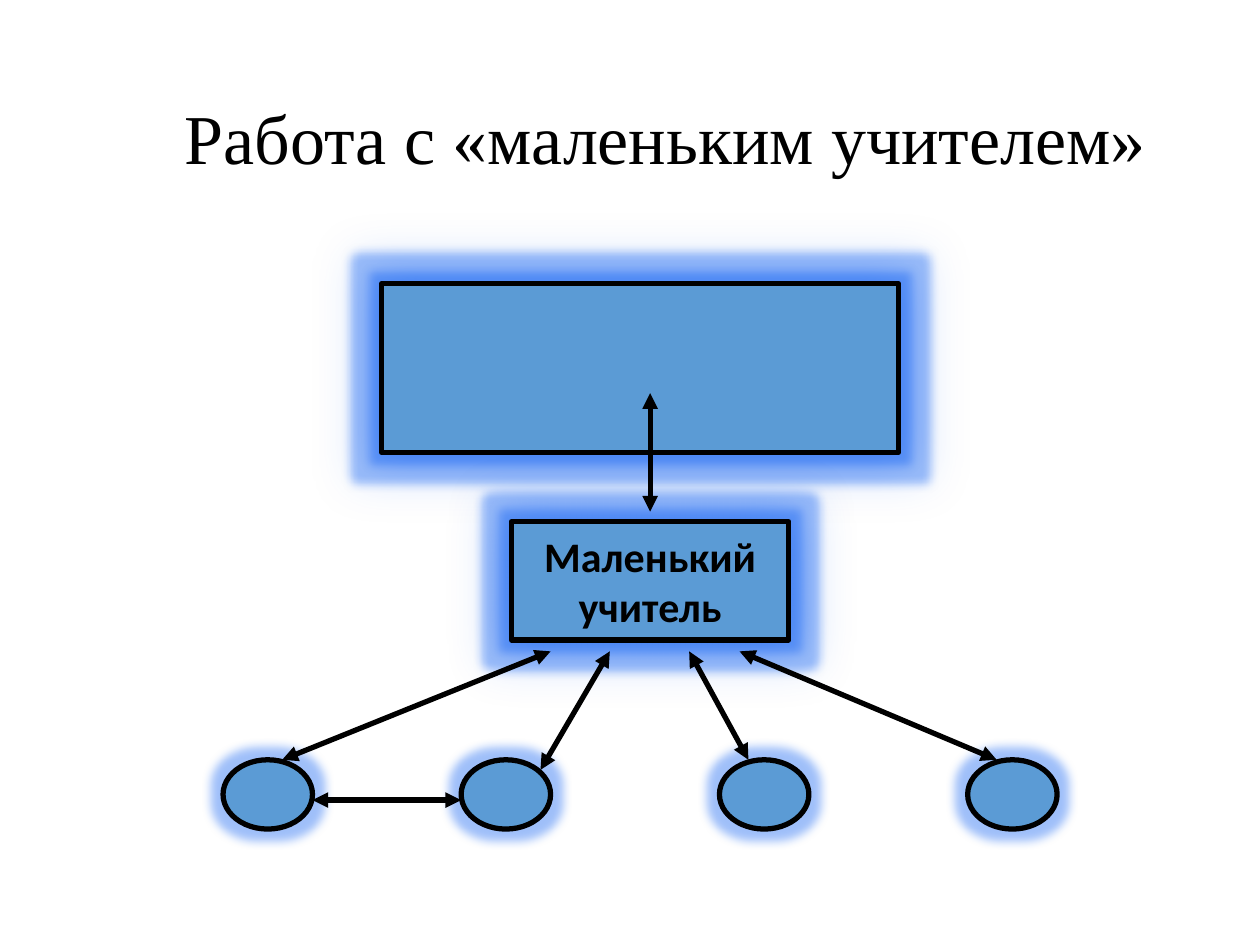
from lxml import etree
from pptx import Presentation
from pptx.dml.color import RGBColor
from pptx.enum import shapes, text
from pptx.oxml import parse_xml
from pptx.oxml.ns import nsdecls, qn
from pptx.util import Inches, Pt

BLACK, BLUE, GLOW = "000000", "5B9BD5", "1161F2"


def rgb(value):
    return RGBColor.from_string(value)


def add_node(kind, x, y, w, h, shadow=""):
    """Blue outlined shape with a glow and an optional soft halo."""
    sp = s.shapes.add_shape(kind, Inches(x), Inches(y), Inches(w), Inches(h))
    sp.shadow.inherit = False
    sp.fill.solid()
    sp.fill.fore_color.rgb = rgb(BLUE)
    sp.line.color.rgb = rgb(BLACK)
    sp.line.width = Pt(3)
    color = f'<a:srgbClr val="{GLOW}"><a:alpha val="40000"/></a:srgbClr>'
    effects = sp._element.spPr.find(qn("a:effectLst"))
    effects.append(parse_xml(f'<a:glow {nsdecls("a")} rad="139700">{color}</a:glow>'))
    if shadow:
        effects.append(parse_xml(
            f'<a:outerShdw {nsdecls("a")} blurRad="{Inches(shadow)}" dist="0" '
            f'algn="ctr" rotWithShape="0">{color}</a:outerShdw>'))
    return sp


prs = Presentation()
prs.slide_width, prs.slide_height = Inches(10), Inches(7.5)
s = prs.slides.add_slide(prs.slide_layouts[6])

# Title, shifted right by its left inset
tf = s.shapes.add_textbox(Inches(0.69), Inches(0.4), Inches(8.62), Inches(1.45)).text_frame
tf.word_wrap = True
tf.margin_left = Inches(0.66)
tf.vertical_anchor = text.MSO_ANCHOR.MIDDLE
tf.text = "Работа с «маленьким учителем»"
p = tf.paragraphs[0]
p.alignment = text.PP_ALIGN.CENTER
p.line_spacing = 0.9
p.font.size = Pt(40)
p.font.name = "Times New Roman"
p.font.color.rgb = rgb(BLACK)

# Teacher and little teacher boxes
add_node(shapes.MSO_SHAPE.RECTANGLE, 3.03, 2.25, 4.1, 1.34, shadow=0.36)
helper = add_node(shapes.MSO_SHAPE.RECTANGLE, 4.06, 4.14, 2.2, 0.94, shadow=0.36)
tf = helper.text_frame
tf.word_wrap = False
tf.vertical_anchor = text.MSO_ANCHOR.MIDDLE
tf.text = "Маленький\nучитель"
for p in tf.paragraphs:
    p.alignment = text.PP_ALIGN.CENTER
    p.font.size = Pt(24)
    p.font.bold = True
    p.font.name = "Calibri"
    p.font.color.rgb = rgb(BLACK)

# Pupils
for x in (1.77, 3.66, 5.71, 7.68):
    add_node(shapes.MSO_SHAPE.OVAL, x, 6.03, 0.71, 0.55)

# Two-way arrows
arrows = [
    (5.16, 3.12, 5.16, 4.06),
    (4.37, 5.17, 2.24, 6.03),
    (2.48, 6.35, 3.66, 6.35),
    (4.84, 5.17, 4.29, 6.11),
    (5.47, 5.17, 5.94, 6.03),
    (5.87, 5.17, 7.91, 6.03),
]
for ends in arrows:
    cx = s.shapes.add_connector(shapes.MSO_CONNECTOR.STRAIGHT, *map(Inches, ends))
    cx.line.color.rgb = rgb(BLACK)
    cx.line.width = Pt(3)
    ln = cx.line._get_or_add_ln()
    for tag in ("a:headEnd", "a:tailEnd"):
        etree.SubElement(ln, qn(tag), type="triangle")
    etree.SubElement(cx._element.spPr, qn("a:effectLst"))

prs.save("out.pptx")
